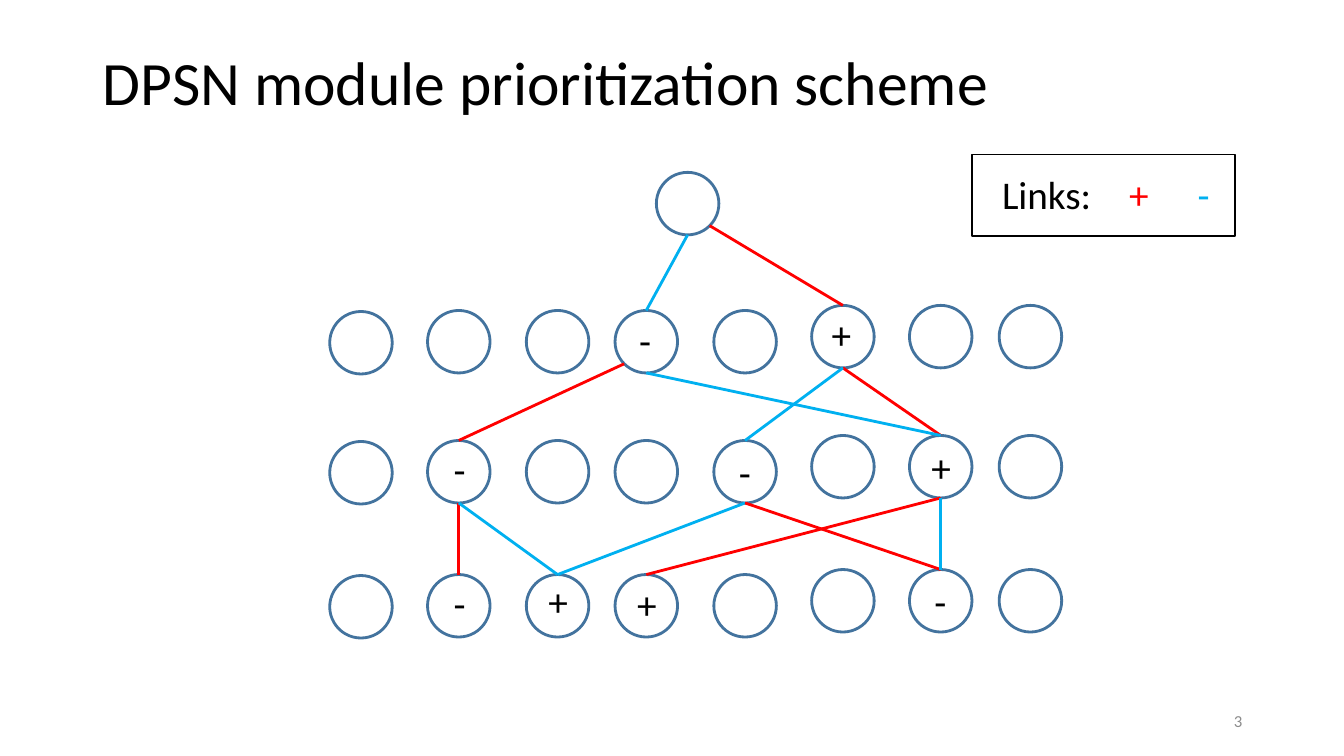
from pptx import Presentation
from pptx.dml.color import RGBColor
from pptx.enum import shapes, text
from pptx.oxml.ns import qn
from pptx.util import Inches, Pt
from lxml import etree

BLACK = RGBColor(0x00, 0x00, 0x00)
GREY = RGBColor(0x8C, 0x8C, 0x8C)
NODE = RGBColor(0x43, 0x73, 0x9E)
RED = RGBColor(0xFF, 0x00, 0x00)
BLUE = RGBColor(0x00, 0xB0, 0xF0)

# Content: nodes are (layer, column); the root stands above the layers
TITLE = "DPSN module prioritization scheme"
PAGE = "3"
ROOT = (0, 0)
SIGNS = [  # node, sign, shift of the text box from the node
    ((1, 3), "-", 0.14, 0.01), ((1, 5), "+", 0.1, 0),
    ((2, 1), "-", 0.16, 0), ((2, 4), "-", 0.15, 0.03), ((2, 6), "+", 0.12, 0.03),
    ((3, 1), "-", 0.16, 0), ((3, 2), "+", 0.12, -0.02),
    ((3, 3), "+", 0.12, 0.01), ((3, 6), "-", 0.15, 0.03),
]
LINKS = [  # parent, child, colour, side of the parent (-1 left, 0 bottom, 1 right)
    (ROOT, (1, 5), RED, 1), (ROOT, (1, 3), BLUE, 0),
    ((1, 5), (2, 6), RED, 0), ((1, 3), (2, 1), RED, -1),
    ((1, 3), (2, 6), BLUE, 0), ((1, 5), (2, 4), BLUE, 0),
    ((2, 6), (3, 3), RED, 0), ((2, 1), (3, 1), RED, 0),
    ((2, 1), (3, 2), BLUE, 0), ((2, 4), (3, 2), BLUE, 0),
    ((2, 4), (3, 6), RED, 0), ((2, 6), (3, 6), BLUE, 0),
]
LEGEND = [("Links:", 9.84, 1.26, BLACK), ("+", 11.1, 0.47, RED), ("-", 11.78, 0.47, BLUE)]

# Layout
SIZE = 0.62
RADIUS = SIZE / 2
DIAGONAL = RADIUS * 0.707
COLUMNS = [3.27, 4.24, 5.22, 6.1, 7.08, 8.05, 9.02, 9.91]
DROPS = [0.06, 0.05, 0.05, 0.05, 0.05, 0, 0, 0]
LAYERS = {1: 3.03, 2: 4.32, 3: 5.65}

nodes = {ROOT: (6.51, 1.71)}
for layer, top in LAYERS.items():
    for col, (left, drop) in enumerate(zip(COLUMNS, DROPS)):
        nodes[layer, col] = (left, top + drop)

prs = Presentation()
prs.slide_width, prs.slide_height = Inches(13.33), Inches(7.5)
s = prs.slides.add_slide(prs.slide_layouts[6])


def add_text(content, left, top, width, height, size=28, color=BLACK,
             align=text.PP_ALIGN.LEFT, anchor=text.MSO_ANCHOR.TOP, spacing=1.0):
    tf = s.shapes.add_textbox(*map(Inches, (left, top, width, height))).text_frame
    tf.word_wrap = True
    tf.vertical_anchor = anchor
    p = tf.paragraphs[0]
    p.alignment, p.line_spacing = align, spacing
    r = p.add_run()
    r.text = content
    r.font.name, r.font.size = "Calibri", Pt(size)
    r.font.color.rgb = color


def add_outline(kind, left, top, width, height, color, weight):
    sp = s.shapes.add_shape(kind, *map(Inches, (left, top, width, height)))
    sp.shadow.inherit = False
    sp.fill.background()
    sp.line.color.rgb, sp.line.width = color, Pt(weight)


def add_link(parent, child, color, side):
    (x1, y1), (x2, y2) = nodes[parent], nodes[child]
    reach = RADIUS + DIAGONAL if side else SIZE
    ends = (x1 + RADIUS + side * DIAGONAL, y1 + reach, x2 + RADIUS, y2)
    line = s.shapes.add_connector(shapes.MSO_CONNECTOR.STRAIGHT, *map(Inches, ends))
    line.line.color.rgb, line.line.width = color, Pt(2)
    etree.SubElement(line._element.spPr, qn("a:effectLst"))


# Title and page number
add_text(TITLE, 0.92, 0.4, 11.5, 0.9, size=44, anchor=text.MSO_ANCHOR.MIDDLE, spacing=0.9)
add_text(PAGE, 9.42, 6.95, 3, 0.4, size=12, color=GREY,
         align=text.PP_ALIGN.RIGHT, anchor=text.MSO_ANCHOR.MIDDLE)

# Network
for left, top in nodes.values():
    add_outline(shapes.MSO_SHAPE.OVAL, left, top, SIZE, SIZE, NODE, 2)
for link in LINKS:
    add_link(*link)
for node, sign, dx, dy in SIGNS:
    left, top = nodes[node]
    add_text(sign, left + dx, top + dy, 0.47, 0.57)

# Legend
for label, left, width, color in LEGEND:
    add_text(label, left, 1.64, width, 0.57, color=color)
add_outline(shapes.MSO_SHAPE.RECTANGLE, 9.64, 1.53, 2.61, 0.81, BLACK, 1)

prs.save("out.pptx")
